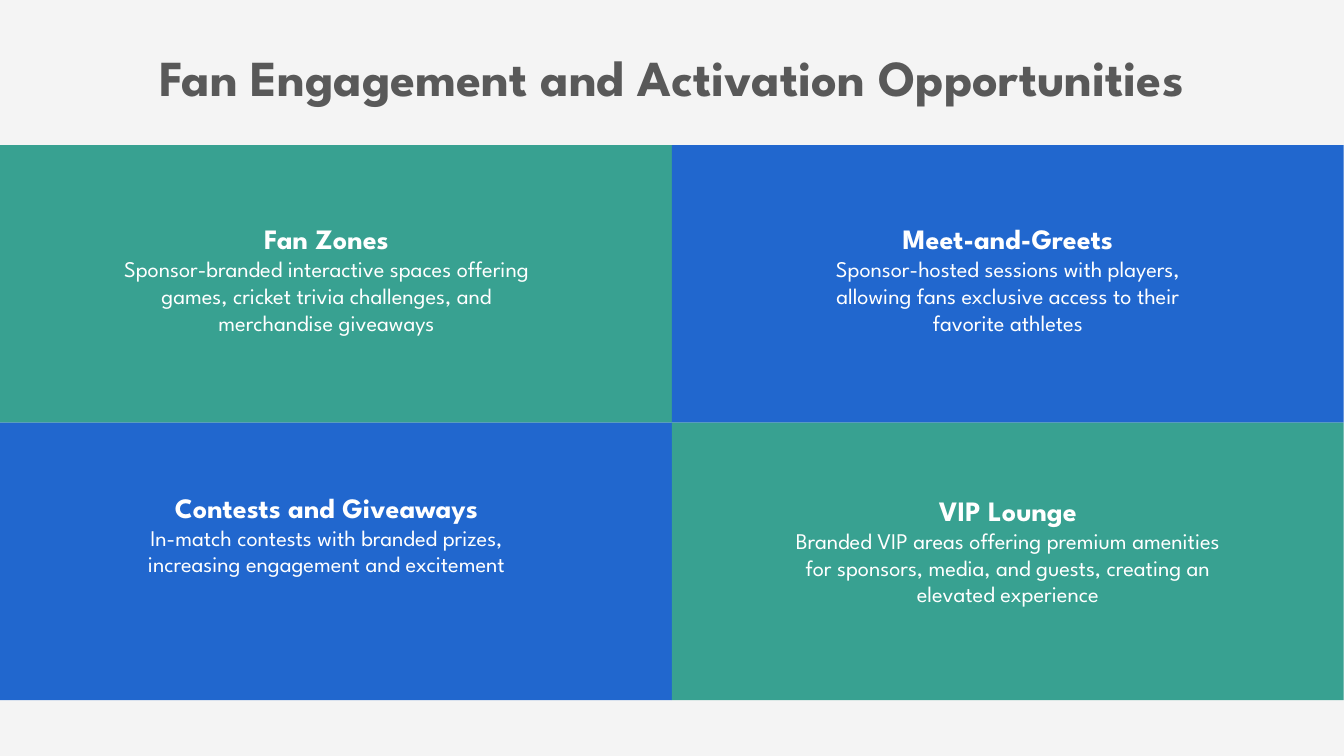
"""Build the fan engagement slide: a title above a two-by-two grid of ideas."""
from pptx import Presentation
from pptx.dml.color import RGBColor
from pptx.enum.shapes import MSO_SHAPE
from pptx.enum.text import MSO_ANCHOR, MSO_AUTO_SIZE, PP_ALIGN
from pptx.util import Cm, Pt

COLORS = {"background": "F4F4F4", "heading": "595959", "green": "38A191",
          "blue": "2167CE", "white": "FFFFFF"}
FONT = "League Spartan"
FRAME_FORMAT = {"word_wrap": True, "auto_size": MSO_AUTO_SIZE.NONE,
                "vertical_anchor": MSO_ANCHOR.TOP,
                "margin_left": Cm(0.25), "margin_right": Cm(0.25),
                "margin_top": Cm(0.13), "margin_bottom": Cm(0.13)}
HEADING_FORMAT = {"name": FONT, "size": Pt(36), "bold": True}
IDEA_FORMAT = {"name": FONT, "size": Pt(20), "bold": True}
DETAIL_FORMAT = {"name": FONT, "size": Pt(16), "bold": False}

TILE_WIDTH, TILE_HEIGHT, GRID_TOP = 16.93, 6.99, 3.66
COLUMN_CENTERS = (8.23, 25.4)
IDEAS = [
    ("Fan Zones", "Sponsor-branded interactive spaces offering games, cricket "
     "trivia challenges, and merchandise giveaways", 5.46, 11.63),
    ("Meet-and-Greets", "Sponsor-hosted sessions with players, allowing fans "
     "exclusive access to their favorite athletes", 5.46, 9.98),
    ("Contests and Giveaways", "In-match contests with branded prizes, "
     "increasing engagement and excitement", 12.22, 9.86),
    ("VIP Lounge", "Branded VIP areas offering premium amenities for sponsors, "
     "media, and guests, creating an elevated experience", 12.3, 11.79),
]


def apply(target, values):
    for attribute, value in values.items():
        setattr(target, attribute, value)


def write(frame, lines):
    apply(frame, FRAME_FORMAT)
    frame.text = "\n".join(text for text, _, _ in lines)
    for paragraph, (_, font_format, color) in zip(frame.paragraphs, lines):
        paragraph.alignment = PP_ALIGN.CENTER
        font = paragraph.runs[0].font
        apply(font, font_format)
        font.color.rgb = RGBColor.from_string(COLORS[color])


deck = Presentation()
apply(deck, {"slide_width": Cm(33.87), "slide_height": Cm(19.05)})
slide = deck.slides.add_slide(deck.slide_layouts[5])
slide.background.fill.solid()
slide.background.fill.fore_color.rgb = RGBColor.from_string(COLORS["background"])

heading = slide.shapes.title
apply(heading, {"left": Cm(2.31), "top": Cm(1.02),
                "width": Cm(29.24), "height": Cm(1.8)})
write(heading.text_frame, [("Fan Engagement and Activation Opportunities",
                            HEADING_FORMAT, "heading")])

for index in range(len(IDEAS)):
    row, column = divmod(index, 2)
    tile = slide.shapes.add_shape(
        MSO_SHAPE.ROUNDED_RECTANGLE, Cm(column * TILE_WIDTH),
        Cm(GRID_TOP + row * TILE_HEIGHT), Cm(TILE_WIDTH), Cm(TILE_HEIGHT))
    tile.adjustments[0] = 0
    tile.shadow.inherit = False
    tile.fill.solid()
    tile_color = ("green", "blue")[(row + column) % 2]
    tile.fill.fore_color.rgb = RGBColor.from_string(COLORS[tile_color])
    tile.line.fill.background()

for index, (idea, detail, top, width) in enumerate(IDEAS):
    caption = slide.shapes.add_textbox(
        Cm(COLUMN_CENTERS[index % 2] - width / 2), Cm(top), Cm(width), Cm(3.18))
    write(caption.text_frame, [(idea, IDEA_FORMAT, "white"),
                               (detail, DETAIL_FORMAT, "white")])

deck.save("out.pptx")
